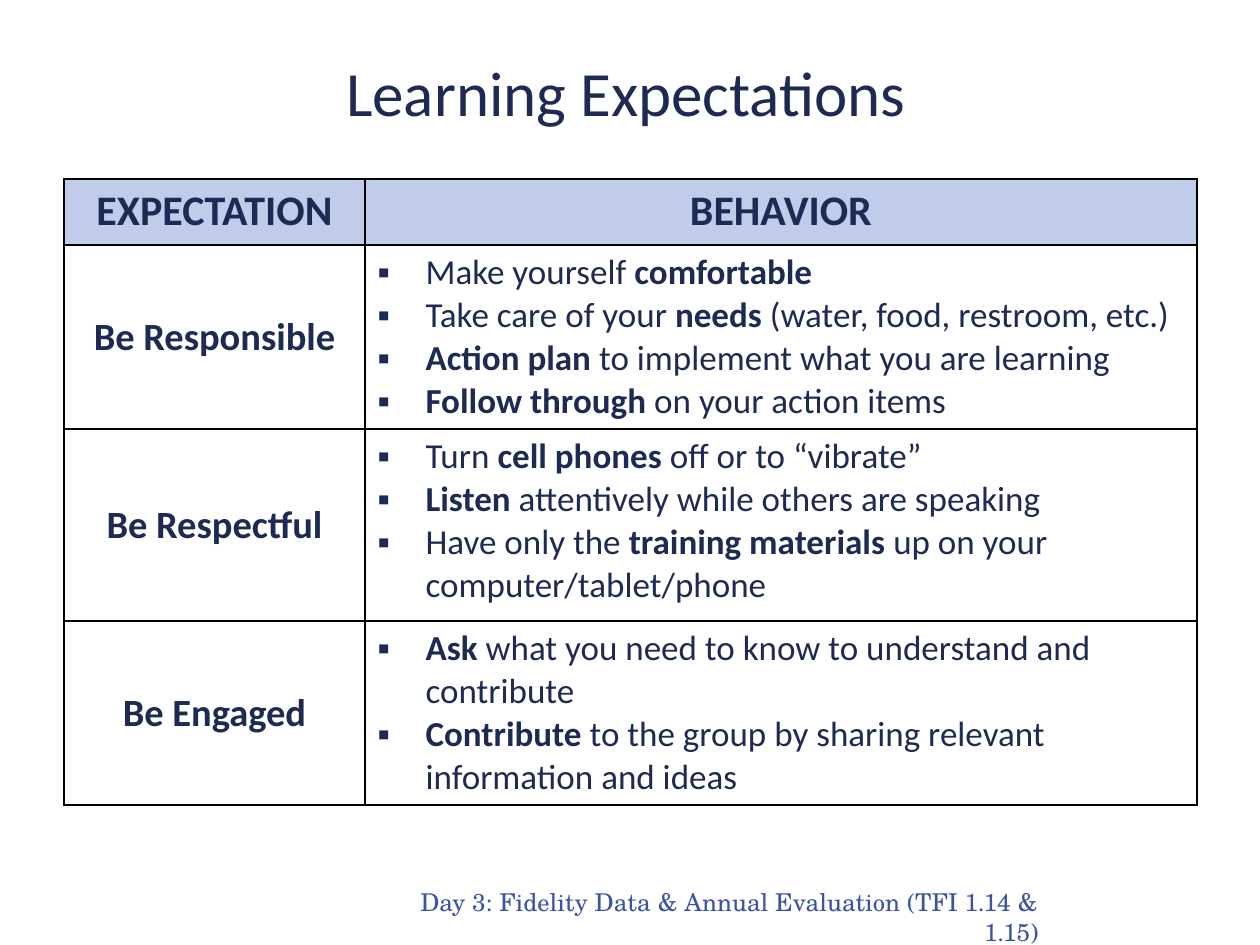
from lxml.etree import SubElement
from pptx import Presentation
from pptx.dml.color import RGBColor
from pptx.enum.text import MSO_ANCHOR as ANCHOR, PP_ALIGN as ALIGN
from pptx.oxml.ns import qn
from pptx.util import Pt

PX = 7257  # EMU in one px, at 126 px to the inch
NAVY, BLUE, HEAD, BLACK, WHITE = "1D2A53", "3A53A5", "C1CCEB", "000000", "FFFFFF"


def rgb(color):
    return RGBColor.from_string(color)


def write(p, text, size, color=NAVY, font="Calibri", align=ALIGN.LEFT, bold=False):
    """Fill a paragraph; text between asterisks switches the weight."""
    p.alignment = align
    for i, part in enumerate(text.split("*")):
        if part:
            r = p.add_run()
            r.text = part
            r.font.size, r.font.name = Pt(size), font
            r.font.bold = bold != (i % 2 == 1)
            r.font.color.rgb = rgb(color)


rows = [
    ("Be Responsible", None, [
        "Make yourself *comfortable*",
        "Take care of your *needs* (water, food, restroom, etc.)",
        "*Action plan *to implement what you are learning",
        "*Follow through *on your action items"]),
    ("Be Respectful", None, [
        "Turn *cell phones* off or to “vibrate”",
        "*Listen *attentively while others are speaking",
        "Have only the *training materials *up on your computer/tablet/phone"]),
    ("Be Engaged", WHITE, [
        "*Ask* what you need to know to understand and contribute",
        "*Contribute *to the group by sharing relevant information and ideas"]),
]
col_widths = [301, 832]
row_heights = [66, 184, 192, 184]

prs = Presentation()
prs.slide_width, prs.slide_height = 1260 * PX, 945 * PX
s = prs.slides.add_slide(prs.slide_layouts[5])

# Footer
sp = s.shapes.add_textbox(359 * PX, 881 * PX, 692 * PX, 64 * PX)
tf = sp.text_frame
tf.word_wrap = True
write(tf.paragraphs[0], "Day 3: Fidelity Data & Annual Evaluation (TFI 1.14 & 1.15)", 14,
      color=BLUE, font="TeX Gyre Schola", align=ALIGN.RIGHT)

# Title
title = s.shapes.title
title.left, title.top, title.width, title.height = 64 * PX, 48 * PX, 1124 * PX, 86 * PX
title.text_frame.vertical_anchor = ANCHOR.MIDDLE
write(title.text_frame.paragraphs[0], "Learning Expectations", 36, align=ALIGN.CENTER)

# Table grid
table = s.shapes.add_table(len(row_heights), len(col_widths), 64 * PX, 179 * PX,
                           sum(col_widths) * PX, sum(row_heights) * PX).table
table.first_row = table.horz_banding = False
for col, width in zip(table.columns, col_widths):
    col.width = width * PX
for row, height in zip(table.rows, row_heights):
    row.height = height * PX

# Cell borders and fills
fills = [HEAD] + [fill for _, fill, _ in rows]
for row, fill in zip(table.rows, fills):
    for cell in row.cells:
        tcPr = cell._tc.get_or_add_tcPr()
        for side in ("a:lnL", "a:lnR", "a:lnT", "a:lnB"):
            ln = SubElement(tcPr, qn(side), w=str(Pt(1)))
            SubElement(SubElement(ln, qn("a:solidFill")), qn("a:srgbClr"), val=BLACK)
        if fill:
            cell.fill.solid()
            cell.fill.fore_color.rgb = rgb(fill)
        else:
            cell.fill.background()

# Header row
for cell, text in zip(table.rows[0].cells, ["EXPECTATION", "BEHAVIOR"]):
    write(cell.text_frame.paragraphs[0], text, 24, align=ALIGN.CENTER, bold=True)

# Expectations with their bulleted behaviors
for i, (expectation, _, behaviors) in enumerate(rows, start=1):
    cell = table.cell(i, 0)
    cell.vertical_anchor = ANCHOR.MIDDLE
    write(cell.text_frame.paragraphs[0], expectation, 22, align=ALIGN.CENTER, bold=True)

    tf = table.cell(i, 1).text_frame
    for j, behavior in enumerate(behaviors):
        p = tf.add_paragraph() if j else tf.paragraphs[0]
        pPr = p._p.get_or_add_pPr()
        pPr.set("marL", str(48 * PX))
        pPr.set("indent", str(-48 * PX))
        SubElement(SubElement(pPr, qn("a:buClr")), qn("a:srgbClr"), val=NAVY)
        SubElement(pPr, qn("a:buFont"), typeface="Calibri")
        SubElement(pPr, qn("a:buChar"), char="▪")
        write(p, behavior, 20)

prs.save("out.pptx")
